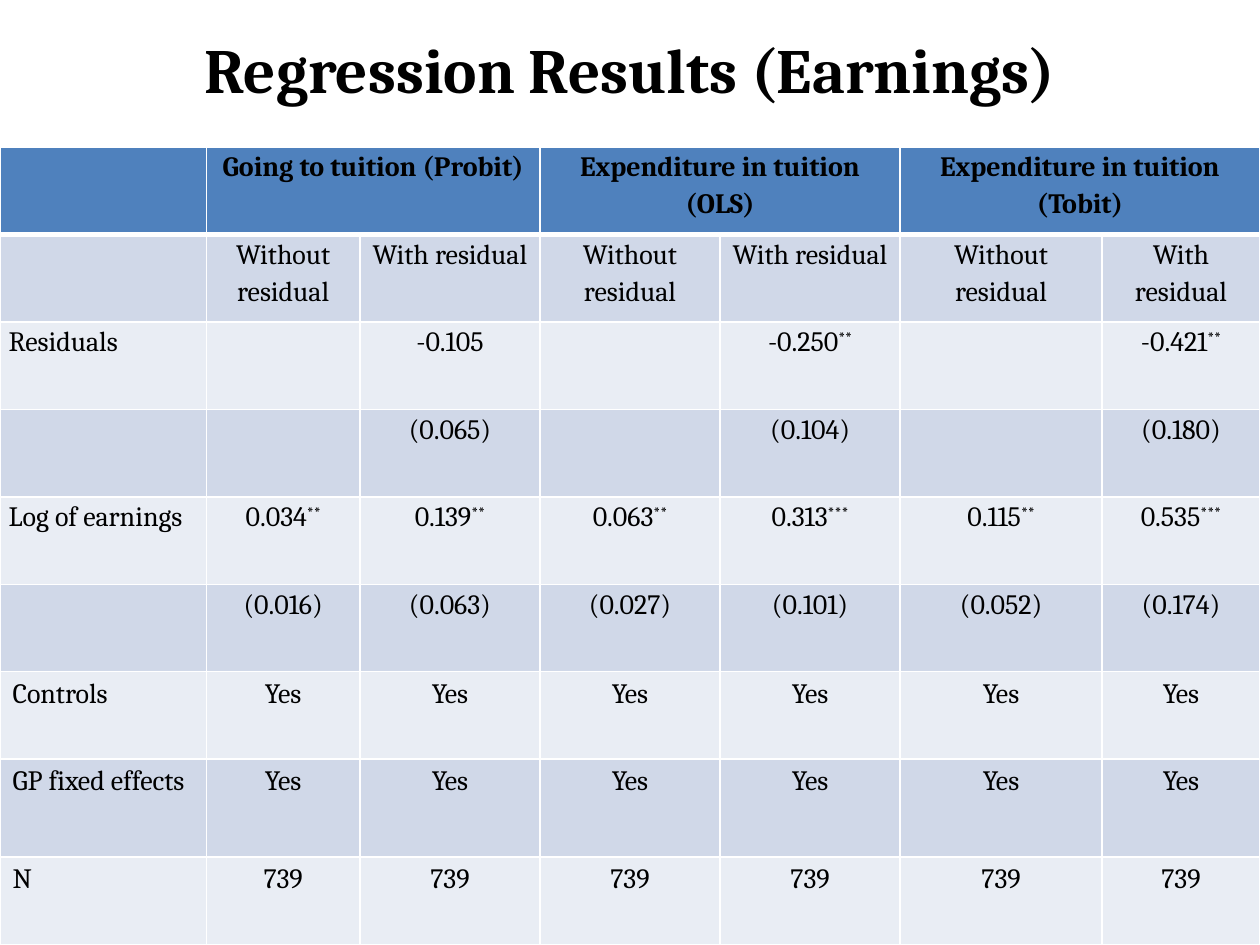
from dataclasses import dataclass

from lxml import etree
from pptx import Presentation
from pptx.dml.color import RGBColor
from pptx.enum.text import MSO_ANCHOR, PP_ALIGN
from pptx.oxml.ns import qn
from pptx.util import Pt

LEFT, CENTER = PP_ALIGN.LEFT, PP_ALIGN.CENTER
MIDDLE = MSO_ANCHOR.MIDDLE

BLACK = RGBColor(0x00, 0x00, 0x00)
WHITE = RGBColor(0xFF, 0xFF, 0xFF)
HEADER_BLUE = RGBColor(0x4F, 0x81, 0xBD)
BAND_DARK = RGBColor(0xD0, 0xD8, 0xE8)
BAND_LIGHT = RGBColor(0xE9, 0xED, 0xF4)

FONT = "Cambria"
TITLE_ONLY = 5
SLIDE_WIDTH, SLIDE_HEIGHT = 720, 540
TITLE_HEIGHT = 78.5
TABLE_TOP = 84
COLUMN_WIDTHS = (118, 87.7, 102.9, 102.9, 102.9, 115.4, 90.2)
ROW_HEIGHT, TALL_ROW_HEIGHT = 50, 56
THIN, THICK = 1, 3


@dataclass(frozen=True)
class TableRow:
    label: str
    values: tuple[str, ...]
    compact: bool = True
    height: float = ROW_HEIGHT


MODELS = ("Going to tuition (Probit)", "Expenditure in tuition (OLS)",
          "Expenditure in tuition (Tobit)")
BODY_ROWS = (
    TableRow("", ("Without residual", "With residual") * len(MODELS)),
    TableRow("Residuals", ("", "-0.105", "", "-0.250**", "", "-0.421**")),
    TableRow("", ("", "(0.065)", "", "(0.104)", "", "(0.180)")),
    TableRow("Log of earnings",
             ("0.034**", "0.139**", "0.063**", "0.313***", "0.115**", "0.535***")),
    TableRow("", ("(0.016)", "(0.063)", "(0.027)", "(0.101)", "(0.052)", "(0.174)")),
    TableRow("Controls", ("Yes",) * 6, compact=False),
    TableRow("GP fixed effects", ("Yes",) * 6, compact=False, height=TALL_ROW_HEIGHT),
    TableRow("N", ("739",) * 6, compact=False),
)


def write_text(text_frame, text: str, *, size: float = 16, bold: bool = False,
               align=CENTER, line_spacing: float = 1.0) -> None:
    """Write one paragraph, raising trailing significance stars to superscript."""
    paragraph = text_frame.paragraphs[0]
    paragraph.alignment = align
    paragraph.line_spacing = line_spacing
    number = text.rstrip("*")
    stars = text[len(number):]
    for part in filter(None, (number, stars)):
        run = paragraph.add_run()
        run.text = part
        run.font.name = FONT
        run.font.size = Pt(size)
        run.font.bold = bold
        run.font.color.rgb = BLACK
        if part == stars:
            run.font._element.set("baseline", "30000")


def set_borders(cell, top: float, bottom: float) -> None:
    properties = cell._tc.get_or_add_tcPr()
    widths = {"a:lnL": THIN, "a:lnR": THIN, "a:lnT": top, "a:lnB": bottom}
    for position, (tag, width) in enumerate(widths.items()):
        line = etree.Element(qn(tag), w=str(Pt(width)))
        fill = etree.SubElement(line, qn("a:solidFill"))
        etree.SubElement(fill, qn("a:srgbClr"), val=str(WHITE))
        properties.insert(position, line)


def format_cell(cell, fill: RGBColor, *, compact: bool = True,
                top: float = THIN, bottom: float = THIN) -> None:
    cell.fill.solid()
    cell.fill.fore_color.rgb = fill
    if compact:
        cell.margin_left = cell.margin_right = Pt(5)
        cell.margin_top = cell.margin_bottom = Pt(0)
    set_borders(cell, top, bottom)


def add_title(slide, text: str) -> None:
    title = slide.shapes.title
    title.left, title.top = Pt(0), Pt(0)
    title.width, title.height = Pt(SLIDE_WIDTH), Pt(TITLE_HEIGHT)
    title.text_frame.vertical_anchor = MIDDLE
    write_text(title.text_frame, text, size=36, bold=True)


def fill_header(table) -> None:
    for column in range(len(COLUMN_WIDTHS)):
        format_cell(table.cell(0, column), HEADER_BLUE, bottom=THICK)
    for index, model in enumerate(MODELS):
        first = 1 + 2 * index
        cell = table.cell(0, first)
        cell.merge(table.cell(0, first + 1))
        write_text(cell.text_frame, model, bold=True, line_spacing=1.15)


def fill_body_row(table, index: int, row: TableRow) -> None:
    table.rows[index].height = Pt(row.height)
    for column, text in enumerate((row.label, *row.values)):
        cell = table.cell(index, column)
        format_cell(cell, BAND_DARK if index % 2 else BAND_LIGHT, compact=row.compact,
                    top=THICK if index == 1 else THIN)
        write_text(cell.text_frame, text, align=CENTER if column else LEFT,
                   line_spacing=1.15 if row.compact else 1.0)


def add_results_table(slide) -> None:
    height = ROW_HEIGHT + sum(row.height for row in BODY_ROWS)
    table = slide.shapes.add_table(
        len(BODY_ROWS) + 1, len(COLUMN_WIDTHS),
        Pt(0), Pt(TABLE_TOP), Pt(SLIDE_WIDTH), Pt(height)).table
    for column, width in zip(table.columns, COLUMN_WIDTHS):
        column.width = Pt(width)
    table.rows[0].height = Pt(ROW_HEIGHT)
    fill_header(table)
    for index, row in enumerate(BODY_ROWS, start=1):
        fill_body_row(table, index, row)


def main() -> None:
    presentation = Presentation()
    presentation.slide_width, presentation.slide_height = Pt(SLIDE_WIDTH), Pt(SLIDE_HEIGHT)
    slide = presentation.slides.add_slide(presentation.slide_layouts[TITLE_ONLY])
    add_title(slide, "Regression Results (Earnings)")
    add_results_table(slide)
    presentation.save("out.pptx")


if __name__ == "__main__":
    main()
